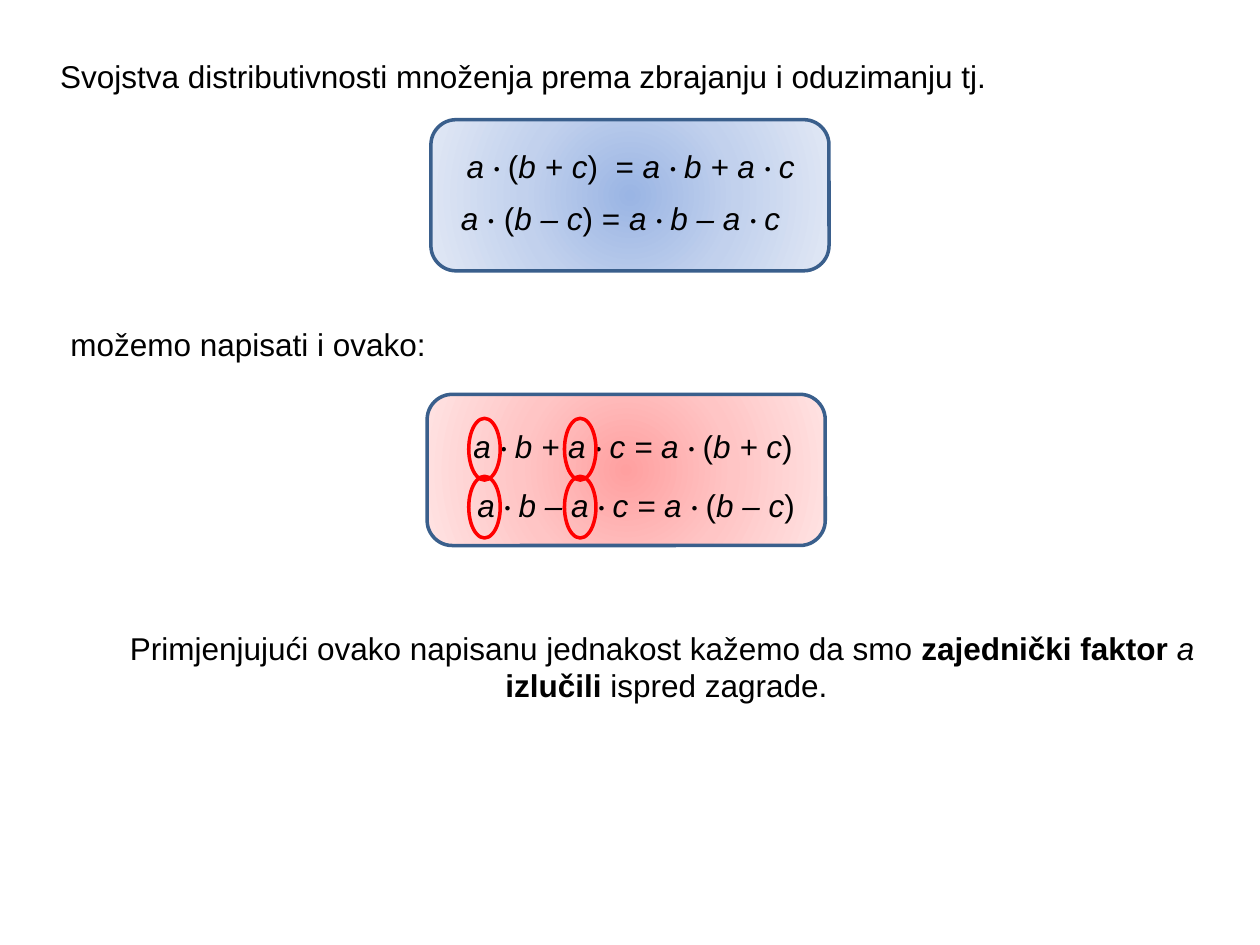
from lxml import etree
from pptx import Presentation
from pptx.dml.color import RGBColor
from pptx.enum import shapes, text
from pptx.oxml import ns
from pptx.util import Inches, Pt

BLACK, NAVY, RED = "000000", "3A5F8C", "FF0000"
BLUE_GLOW = ("9AB5E4", "C2D1ED", "E1E8F5")
RED_GLOW = ("FFA0A0", "FFC5C5", "FFE3E3")
CENTER = text.PP_ALIGN.CENTER


def color(hex_code):
    return RGBColor.from_string(hex_code)


def formula(marked):
    """Split at bars: dots in Calibri, brackets upright, variables italic."""
    def style(piece):
        if piece.startswith("·"):
            return "dot"
        return "" if "(" in piece or ")" in piece else "italic"
    return [(piece, style(piece)) for piece in marked.split("|")]


class SlideBuilder:
    font, dot_font, size, line_width = "Arial", "Calibri", Pt(18), Pt(2)

    def __init__(self, slide):
        self.slide = slide

    def label(self, left, top, width, *paragraphs, align=text.PP_ALIGN.LEFT):
        """Add a text box; each paragraph is a list of (words, style) pairs."""
        height = 0.1 + 0.3 * len(paragraphs)
        frame = self.slide.shapes.add_textbox(
            Inches(left), Inches(top), Inches(width), Inches(height)).text_frame
        frame.word_wrap = True
        frame.auto_size = text.MSO_AUTO_SIZE.SHAPE_TO_FIT_TEXT
        for index, pieces in enumerate(paragraphs):
            paragraph = frame.add_paragraph() if index else frame.paragraphs[0]
            paragraph.alignment = align
            for words, style in pieces:
                run = paragraph.add_run()
                run.text = words
                run.font.name = self.dot_font if style == "dot" else self.font
                run.font.size = self.size
                run.font.bold = style == "bold"
                run.font.italic = style == "italic"
                run.font.color.rgb = color(BLACK)

    def outline(self, kind, left, top, width, height, line):
        shape = self.slide.shapes.add_shape(
            kind, Inches(left), Inches(top), Inches(width), Inches(height))
        shape.shadow.inherit = False
        shape.fill.background()
        shape.line.color.rgb = color(line)
        shape.line.width = self.line_width
        return shape

    def panel(self, left, top, glow):
        """Add a rounded box with a gradient spreading from its centre."""
        box = self.outline(shapes.MSO_SHAPE.ROUNDED_RECTANGLE,
                           left, top, 3.16, 1.2, NAVY)
        gradient = etree.Element(ns.qn("a:gradFill"), rotWithShape="1")
        stops = etree.SubElement(gradient, ns.qn("a:gsLst"))
        for position, shade in zip((0, 50000, 100000), glow):
            stop = etree.SubElement(stops, ns.qn("a:gs"), pos=str(position))
            etree.SubElement(stop, ns.qn("a:srgbClr"), val=shade)
        spread = etree.SubElement(gradient, ns.qn("a:path"), {"path": "circle"})
        etree.SubElement(spread, ns.qn("a:fillToRect"),
                         dict.fromkeys("ltrb", "50000"))
        properties = box.element.spPr
        properties.replace(properties.find(ns.qn("a:noFill")), gradient)

    def ring(self, left, top):
        self.outline(shapes.MSO_SHAPE.OVAL, left, top, 0.25, 0.49, RED)


def main():
    deck = Presentation()
    deck.slide_width, deck.slide_height = Inches(10), Inches(7.5)
    page = SlideBuilder(deck.slides.add_slide(deck.slide_layouts[6]))

    page.label(0.38, 0.4, 8.94, [(
        "Svojstva distributivnosti množenja prema zbrajanju i oduzimanju tj.", "")])
    page.panel(3.42, 0.95, BLUE_GLOW)
    page.label(3.51, 1.12, 2.99,
               formula("a |· |(|b + c|)  = |a |· |b + a |· |c"), align=CENTER)
    page.label(3.56, 1.53, 2.99,
               formula("a |·| (|b – c|) = |a |· |b – a |· |c"))

    page.label(0.46, 2.53, 3.25, [("možemo napisati i ovako:", "")])
    page.panel(3.39, 3.13, RED_GLOW)
    page.label(2.96, 3.34, 4.2,
               formula("a |· |b + a |· |c = a |· |(|b + c|) "), align=CENTER)
    page.label(3.69, 3.81, 2.99,
               formula("a |· |b – a |· |c = a |· |(|b – c|)"))

    page.label(
        0.51, 4.94, 9.49,
        [("Primjenjujući ovako napisanu jednakost kažemo da smo ", ""),
         ("zajednički faktor ", "bold"), ("a", "italic")],
        [(" ", ""), ("izlučili ", "bold"), ("ispred zagrade.", "")],
        align=CENTER)

    for top in (3.32, 3.78):
        for left in (3.72, 4.48):
            page.ring(left, top)

    deck.save("out.pptx")


if __name__ == "__main__":
    main()
